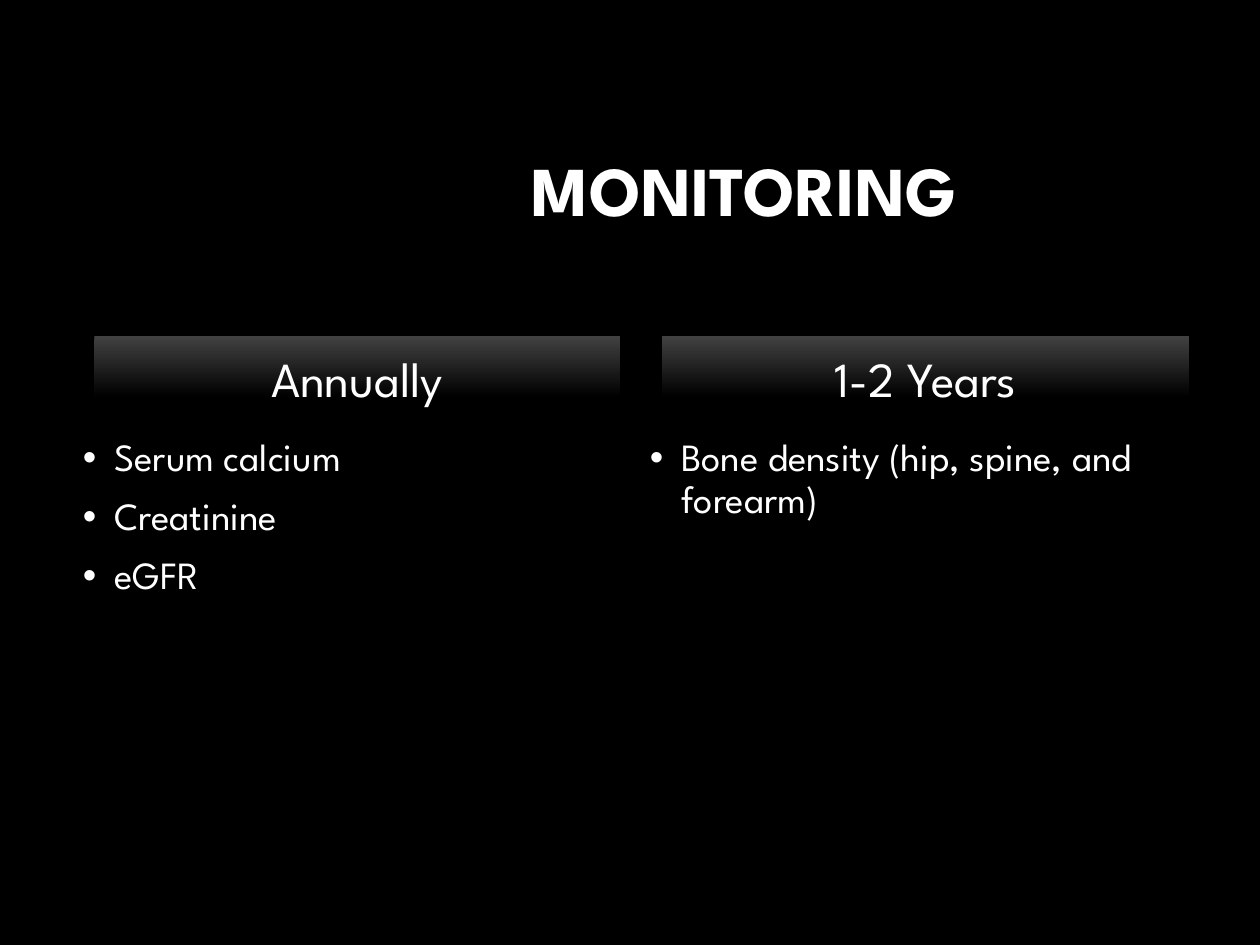
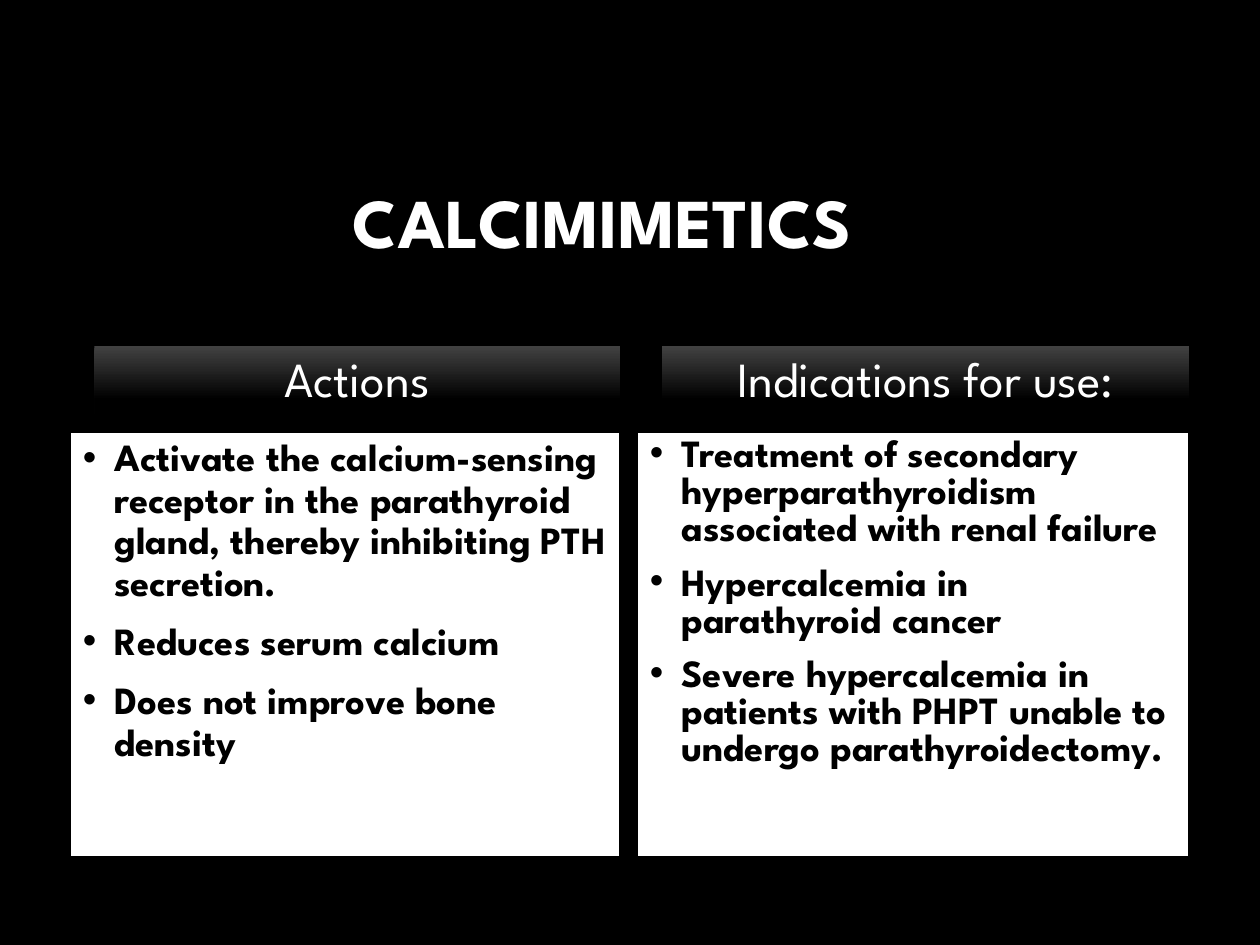
import pptx
import pptx.dml.color
import pptx.enum.shapes
import pptx.enum.text
import pptx.oxml
import pptx.oxml.ns
import pptx.util

Inches = pptx.util.Inches
Pt = pptx.util.Pt
RGBColor = pptx.dml.color.RGBColor
ALIGN = pptx.enum.text.PP_ALIGN
ANCHOR = pptx.enum.text.MSO_ANCHOR

BLACK = RGBColor(0x00, 0x00, 0x00)
WHITE = RGBColor(0xFF, 0xFF, 0xFF)
CHARCOAL = RGBColor(0x41, 0x41, 0x41)
FONT = "League Spartan"

HEADING_BOTTOM = 3.29
BODY_TOP, BODY_HEIGHT = 3.43, 3.37
HEADING_INSET = 0.19
COLUMNS = [(0.56, 4.36), (5.06, 4.38)]


class Deck:
    """Comparison slides: a title above two headed columns of bullets."""

    def __init__(self):
        self.prs = pptx.Presentation()
        self.prs.slide_width = Inches(10)
        self.prs.slide_height = Inches(7.5)

    def slide(self):
        self.s = self.prs.slides.add_slide(self.prs.slide_layouts[6])
        self.s.background.fill.solid()
        self.s.background.fill.fore_color.rgb = BLACK

    def rect(self, *box):
        sp = self.s.shapes.add_shape(
            pptx.enum.shapes.MSO_SHAPE.RECTANGLE, *map(Inches, box))
        sp.shadow.inherit = False
        sp.line.fill.background()
        return sp

    def fill_text(self, sp, lines, anchor, size, bold=False, color=WHITE,
                  spacing=0.9, align=ALIGN.CENTER, bullets=False):
        tf = sp.text_frame
        tf.word_wrap = True
        tf.vertical_anchor = anchor
        style = {"name": FONT, "size": Pt(size), "bold": bold}
        for i, line in enumerate(lines):
            p = tf.add_paragraph() if i else tf.paragraphs[0]
            layout = {"alignment": align, "line_spacing": spacing,
                      "space_before": Pt(10 if i else 0)}
            for name, value in layout.items():
                setattr(p, name, value)
            if bullets:
                self.bullet(p)
            r = p.add_run()
            r.text = line
            r.font.color.rgb = color
            for name, value in style.items():
                setattr(r.font, name, value)

    def bullet(self, p):
        props = p._p.get_or_add_pPr()
        props.set("marL", str(Inches(0.25)))
        props.set("indent", str(-Inches(0.25)))
        for tag, key, value in [("a:buFont", "typeface", "Arial"),
                                ("a:buChar", "char", "•")]:
            mark = pptx.oxml.parse_xml(
                f"<{tag} {pptx.oxml.ns.nsdecls('a')}/>")
            mark.set(key, value)
            props.append(mark)

    def title(self, text, left, top):
        sp = self.s.shapes.add_textbox(
            Inches(left), Inches(top), Inches(7.06), Inches(1.42))
        self.fill_text(sp, [text], ANCHOR.MIDDLE, 40, bold=True)

    def heading(self, text, left, width, top):
        sp = self.rect(left + HEADING_INSET, top, width - HEADING_INSET,
                       HEADING_BOTTOM - top)
        sp.fill.gradient()
        sp.fill.gradient_angle = 270
        stops = zip(sp.fill.gradient_stops, [(0, CHARCOAL), (0.78, BLACK)])
        for stop, (position, color) in stops:
            stop.position = position
            stop.color.rgb = color
        self.fill_text(sp, [text], ANCHOR.BOTTOM, 28)

    def body(self, lines, left, width, panel, spacing):
        sp = self.rect(left, BODY_TOP, width, BODY_HEIGHT)
        if panel:
            sp.fill.solid()
            sp.fill.fore_color.rgb = WHITE
            sp.line.color.rgb = BLACK
            sp.line.width = Pt(1)
        else:
            sp.fill.background()
        self.fill_text(sp, lines, ANCHOR.TOP, 22, panel,
                       BLACK if panel else WHITE, spacing, ALIGN.LEFT, True)

    def comparison(self, title, title_at, heading_top, columns, panel=False):
        self.slide()
        self.title(title, *title_at)
        for (left, width), (heading, lines, spacing) in zip(COLUMNS, columns):
            self.heading(heading, left, width, heading_top)
            self.body(lines, left, width, panel, spacing)


def main():
    deck = Deck()
    deck.comparison("MONITORING", (2.38, 0.83), 2.67, [
        ("Annually", ["Serum calcium", "Creatinine", "eGFR"], 0.9),
        ("1-2 Years", ["Bone density (hip, spine, and forearm)"], 0.9),
    ])
    deck.comparison("CALCIMIMETICS", (1.25, 1.08), 2.75, [
        ("Actions", [
            "Activate the calcium-sensing receptor in the parathyroid gland, "
            "thereby inhibiting PTH secretion.",
            "Reduces serum calcium",
            "Does not improve bone density",
        ], 0.9),
        ("Indications for use:", [
            "Treatment of secondary hyperparathyroidism associated with "
            "renal failure",
            "Hypercalcemia in parathyroid cancer",
            "Severe hypercalcemia in patients with PHPT unable to undergo "
            "parathyroidectomy.",
        ], 0.8),
    ], panel=True)
    deck.prs.save("out.pptx")


if __name__ == "__main__":
    main()
